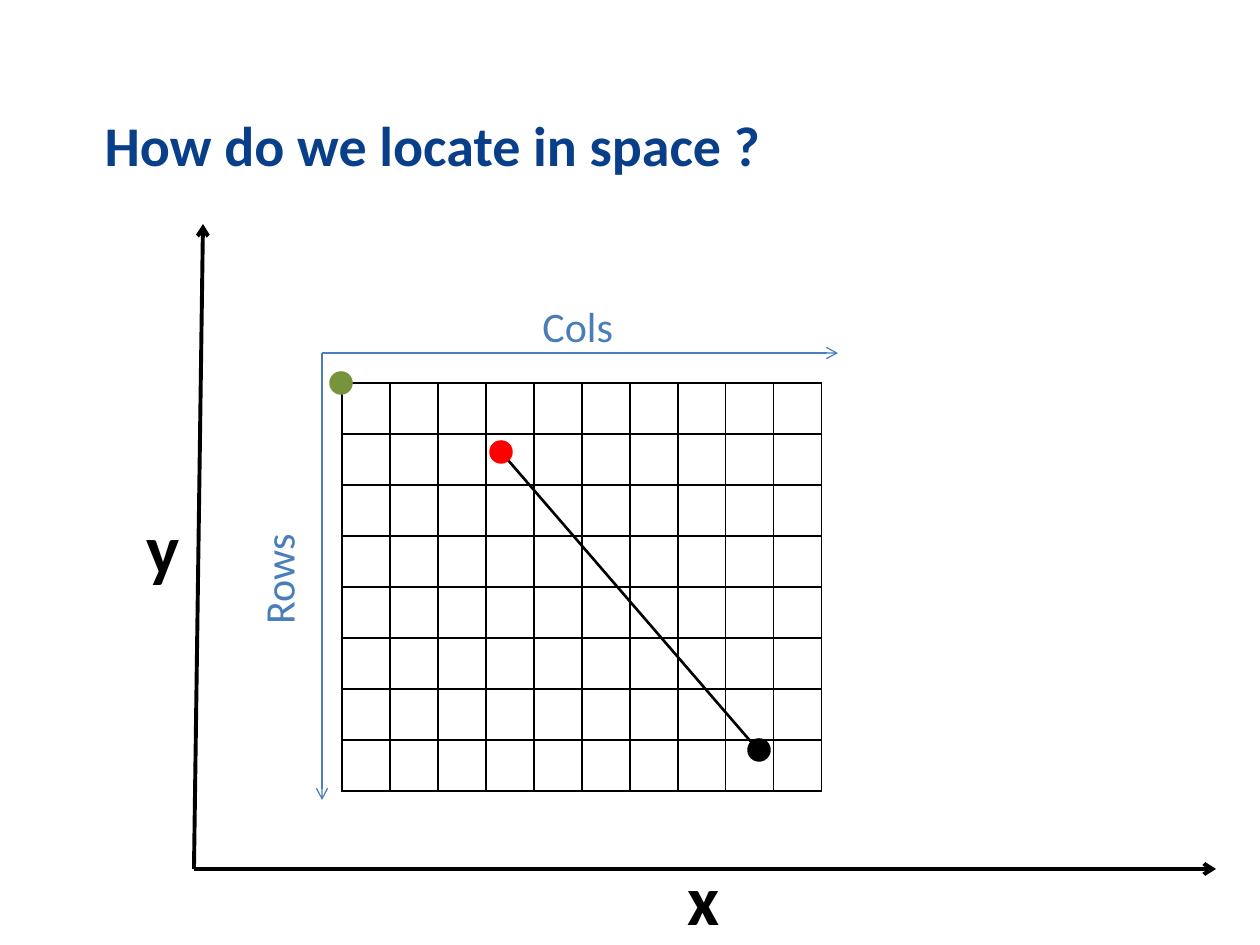
from dataclasses import dataclass

from lxml.etree import SubElement
from pptx import Presentation
from pptx.dml.color import RGBColor
from pptx.enum.shapes import MSO_CONNECTOR, MSO_SHAPE
from pptx.enum.text import MSO_ANCHOR, PP_ALIGN
from pptx.oxml import parse_xml
from pptx.oxml.ns import nsdecls, qn
from pptx.util import Emu, Pt

PX_PER_INCH = 126
FONT = "Calibri"
COLORS = {
    "title": "083F88",
    "axis": "000000",
    "index": "4B7EBC",
    "label": "4A7EBB",
    "origin": "77933C",
    "start": "FF0000",
}


@dataclass
class Line:
    start: tuple[int, int]
    end: tuple[int, int]
    color: str
    width: float
    arrow: bool = True


@dataclass
class Label:
    text: str
    box: tuple[int, int, int, int]
    size: int
    color: str
    bold: bool = False
    rotation: int = 0


@dataclass
class Dot:
    left: int
    top: int
    color: str


def px(length: int) -> Emu:
    return Emu(round(length * 914400 / PX_PER_INCH))


def rgb(name: str) -> RGBColor:
    return RGBColor.from_string(COLORS[name])


def style_font(para, size: int, color: str, bold: bool) -> None:
    font = para.font
    font.name, font.size, font.bold = FONT, Pt(size), bold
    font.color.rgb = rgb(color)


def draw_line(page, line: Line) -> None:
    connector = page.shapes.add_connector(
        MSO_CONNECTOR.STRAIGHT, *map(px, line.start + line.end))
    connector.line.color.rgb = rgb(line.color)
    connector.line.width = Pt(line.width)
    if line.arrow:
        SubElement(connector.line._get_or_add_ln(), qn("a:tailEnd"), type="arrow")
    SubElement(connector._element.spPr, qn("a:effectLst"))


def draw_label(page, label: Label) -> None:
    box = page.shapes.add_textbox(*map(px, label.box))
    box.rotation = label.rotation
    box.text_frame.word_wrap = False
    para = box.text_frame.paragraphs[0]
    para.text = label.text
    style_font(para, label.size, label.color, label.bold)


def draw_dot(page, dot: Dot) -> None:
    shape = page.shapes.add_shape(
        MSO_SHAPE.OVAL, px(dot.left), px(dot.top), px(20), px(20))
    shape.shadow.inherit = False
    shape.fill.solid()
    shape.fill.fore_color.rgb = rgb(dot.color)
    shape.line.color.rgb = rgb(dot.color)
    shape.line.width = Pt(2)


def draw_grid(page, left: int, top: int, cols: int, rows: int,
              cell_width: int, cell_height: int) -> None:
    table = page.shapes.add_table(
        rows, cols, px(left), px(top),
        px(cols * cell_width), px(rows * cell_height)).table
    table.first_row = table.horz_banding = False
    for col in table.columns:
        col.width = px(cell_width)
    for row in table.rows:
        row.height = px(cell_height)
    for cell in table.iter_cells():
        cell.margin_top = cell.margin_bottom = 0
        cell.text_frame.paragraphs[0].font.size = Pt(12)
        cell.fill.background()
        properties = cell._tc.get_or_add_tcPr()
        for index, side in enumerate("LRTB"):
            properties.insert(index, parse_xml(
                f'<a:ln{side} {nsdecls("a")} w="{Pt(1)}"><a:solidFill>'
                f'<a:srgbClr val="{COLORS["axis"]}"/></a:solidFill></a:ln{side}>'))


def main() -> None:
    deck = Presentation()
    deck.slide_width, deck.slide_height = px(1260), px(945)
    page = deck.slides.add_slide(deck.slide_layouts[5])

    # Title
    title = page.shapes.title
    title.left, title.top, title.width, title.height = map(px, (92, 89, 1058, 111))
    title.text_frame.text = "How do we locate in space ?"
    title.text_frame.vertical_anchor = MSO_ANCHOR.MIDDLE
    heading = title.text_frame.paragraphs[0]
    heading.alignment = PP_ALIGN.LEFT
    style_font(heading, 32, "title", True)

    # Pixel grid
    draw_grid(page, 342, 383, cols=10, rows=8, cell_width=48, cell_height=51)

    # Space axes and row/column directions
    origin, corner = (194, 869), (322, 353)
    for line in (
        Line(origin, (203, 224), "axis", 2.25),
        Line(origin, (1216, 869), "axis", 2.25),
        Line(corner, (838, 353), "index", 0.75),
        Line(corner, (322, 800), "index", 0.75),
    ):
        draw_line(page, line)

    # Axis names
    for label in (
        Label("y", (134, 498, 59, 97), 40, "axis", bold=True),
        Label("x", (675, 849, 58, 97), 40, "axis", bold=True),
        Label("Cols", (530, 294, 97, 63), 24, "label"),
        Label("Rows", (220, 547, 116, 63), 24, "label", rotation=270),
    ):
        draw_label(page, label)

    # Located points and the segment between two of them
    draw_line(page, Line((752, 743), (508, 460), "axis", 1.5, arrow=False))
    for dot in (
        Dot(331, 373, "origin"),
        Dot(491, 442, "start"),
        Dot(749, 740, "axis"),
    ):
        draw_dot(page, dot)

    deck.save("out.pptx")


if __name__ == "__main__":
    main()
